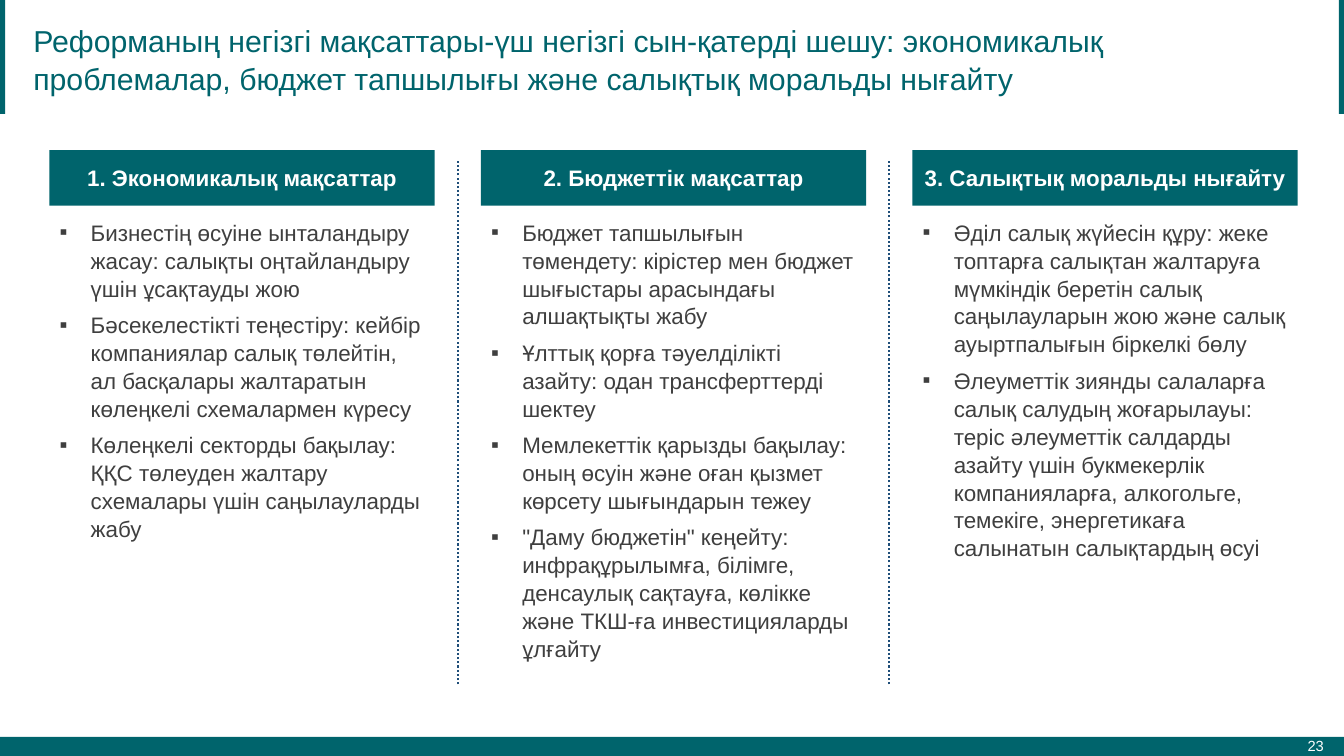
from dataclasses import dataclass

from lxml import etree
from pptx import Presentation
from pptx import util as u
from pptx.dml.color import RGBColor
from pptx.enum import dml, shapes, text
from pptx.oxml import ns

PX = 9144  # EMU in one px, 100 px to the inch
WIDE, HIGH = 1333, 750
FONT = "Arial"
HUES = {"teal": "00646C", "white": "FFFFFF", "grey": "3F3F3F", "navy": "1F4E79"}

LEFT, STEP, HEAD_W = 49, 428, 382
HEAD_TOP, HEAD_H = 149, 55
LIST_TOP = 211
RULE_GAP, RULE_TOP, RULE_END = 23, 160, 679
INDENT = 31
LEAD = 1.04


@dataclass
class Box:
    x: int
    y: int
    w: int
    h: int


@dataclass
class Column:
    head: str
    slot: int  # index of the body placeholder
    w: int
    h: int
    items: list[str]


TITLE = ("Реформаның негізгі мақсаттары-үш негізгі сын-қатерді шешу: экономикалық "
         "проблемалар, бюджет тапшылығы және салықтық моральды нығайту")

COLUMNS = [
    Column("1. Экономикалық мақсаттар", 1, 382, 323, [
        "Бизнестің өсуіне ынталандыру жасау: салықты оңтайландыру үшін ұсақтауды жою",
        "Бәсекелестікті теңестіру: кейбір компаниялар салық төлейтін, ал басқалары "
        "жалтаратын көлеңкелі схемалармен күресу",
        "Көлеңкелі секторды бақылау: ҚҚС төлеуден жалтару схемалары үшін "
        "саңылауларды жабу",
    ]),
    Column("2. Бюджеттік мақсаттар", 2, 386, 451, [
        "Бюджет тапшылығын төмендету: кірістер мен бюджет шығыстары арасындағы "
        "алшақтықты жабу",
        "Ұлттық қорға тәуелділікті азайту: одан трансферттерді шектеу",
        "Мемлекеттік қарызды бақылау: оның өсуін және оған қызмет көрсету "
        "шығындарын тежеу",
        "\"Даму бюджетін\" кеңейту: инфрақұрылымға, білімге, денсаулық сақтауға, "
        "көлікке және ТКШ-ға инвестицияларды ұлғайту",
    ]),
    Column("3. Салықтық моральды нығайту", 4, 382, 421, [
        "Әділ салық жүйесін құру: жеке топтарға салықтан жалтаруға мүмкіндік беретін "
        "салық саңылауларын жою және салық ауыртпалығын біркелкі бөлу",
        "Әлеуметтік зиянды салаларға салық салудың жоғарылауы: теріс әлеуметтік "
        "салдарды азайту үшін букмекерлік компанияларға, алкогольге, темекіге, "
        "энергетикаға салынатын салықтардың өсуі",
    ]),
]
BARS = [Box(0, 731, WIDE, 19), Box(0, -2, 5, 115), Box(WIDE - 5, -2, 5, 115)]


def hue(name: str) -> RGBColor:
    return RGBColor.from_string(HUES[name])


def span(box: Box) -> list[int]:
    return [n * PX for n in (box.x, box.y, box.w, box.h)]


def place(shape, box: Box) -> None:
    shape.left, shape.top, shape.width, shape.height = span(box)


def frame(shape, anchor):
    """Set up the text frame of a shape and return it."""
    body = shape.text_frame
    body.word_wrap = True
    body.auto_size = text.MSO_AUTO_SIZE.NONE
    body.vertical_anchor = anchor
    return body


def write(para, words: str, size: float, tint: str, align, bold: bool = False) -> None:
    para.alignment = align
    run = para.add_run()
    run.text = words
    font = run.font
    font.name, font.size, font.bold = FONT, u.Pt(size), bold
    font.color.rgb = hue(tint)


def bullet(para) -> None:
    props = para._p.get_or_add_pPr()
    props.set("marL", str(INDENT * PX))
    props.set("indent", str(-INDENT * PX))
    etree.SubElement(props, ns.qn("a:buFont")).set("typeface", FONT)
    etree.SubElement(props, ns.qn("a:buChar")).set("char", "▪")


def bar(slide, box: Box):
    shape = slide.shapes.add_shape(shapes.MSO_SHAPE.RECTANGLE, *span(box))
    shape.shadow.inherit = False
    shape.fill.solid()
    shape.fill.fore_color.rgb = hue("teal")
    shape.line.fill.background()
    return shape


def rule(slide, x: int) -> None:
    """Draw a dotted line between two columns."""
    line = slide.shapes.add_connector(
        shapes.MSO_CONNECTOR.STRAIGHT, x * PX, RULE_END * PX, x * PX, RULE_TOP * PX)
    line.line.color.rgb = hue("navy")
    line.line.width = u.Pt(1.5)
    line.line.dash_style = dml.MSO_LINE.ROUND_DOT
    etree.SubElement(line._element.spPr, ns.qn("a:effectLst"))


def fill_list(shape, items: list[str]) -> None:
    body = frame(shape, text.MSO_ANCHOR.TOP)
    for n, item in enumerate(items):
        para = body.add_paragraph() if n else body.paragraphs[0]
        para.line_spacing = LEAD
        para.space_before, para.space_after = u.Pt(0), u.Pt(6)
        bullet(para)
        write(para, item, 16, "grey", text.PP_ALIGN.LEFT)


def column(slide, x: int, col: Column) -> None:
    holder = slide.placeholders[col.slot]
    place(holder, Box(x, LIST_TOP, col.w, col.h))
    fill_list(holder, col.items)
    head = bar(slide, Box(x, HEAD_TOP, HEAD_W, HEAD_H))
    para = frame(head, text.MSO_ANCHOR.MIDDLE).paragraphs[0]
    write(para, col.head, 16, "white", text.PP_ALIGN.CENTER, True)


def main() -> None:
    deck = Presentation()
    deck.slide_width, deck.slide_height = WIDE * PX, HIGH * PX
    slide = deck.slides.add_slide(deck.slide_layouts.get_by_name("Comparison"))

    for box in BARS:
        bar(slide, box)
    page = slide.shapes.add_textbox(*span(Box(1192, 720, 129, 40)))
    para = frame(page, text.MSO_ANCHOR.MIDDLE).paragraphs[0]
    page.text_frame.margin_left = page.text_frame.margin_right = 8 * PX
    write(para, "23", 10.5, "white", text.PP_ALIGN.RIGHT)

    title = slide.shapes.title
    place(title, Box(23, 20, 1255, 77))
    para = frame(title, text.MSO_ANCHOR.MIDDLE).paragraphs[0]
    para.line_spacing = LEAD
    write(para, TITLE, 21.6, "teal", text.PP_ALIGN.LEFT)

    for n, col in enumerate(COLUMNS):
        x = LEFT + n * STEP
        column(slide, x, col)
        if n:
            rule(slide, x - RULE_GAP)

    used = {0} | {col.slot for col in COLUMNS}
    for holder in list(slide.placeholders):
        if holder.placeholder_format.idx not in used:
            holder._element.getparent().remove(holder._element)
    deck.save("out.pptx")


if __name__ == "__main__":
    main()
